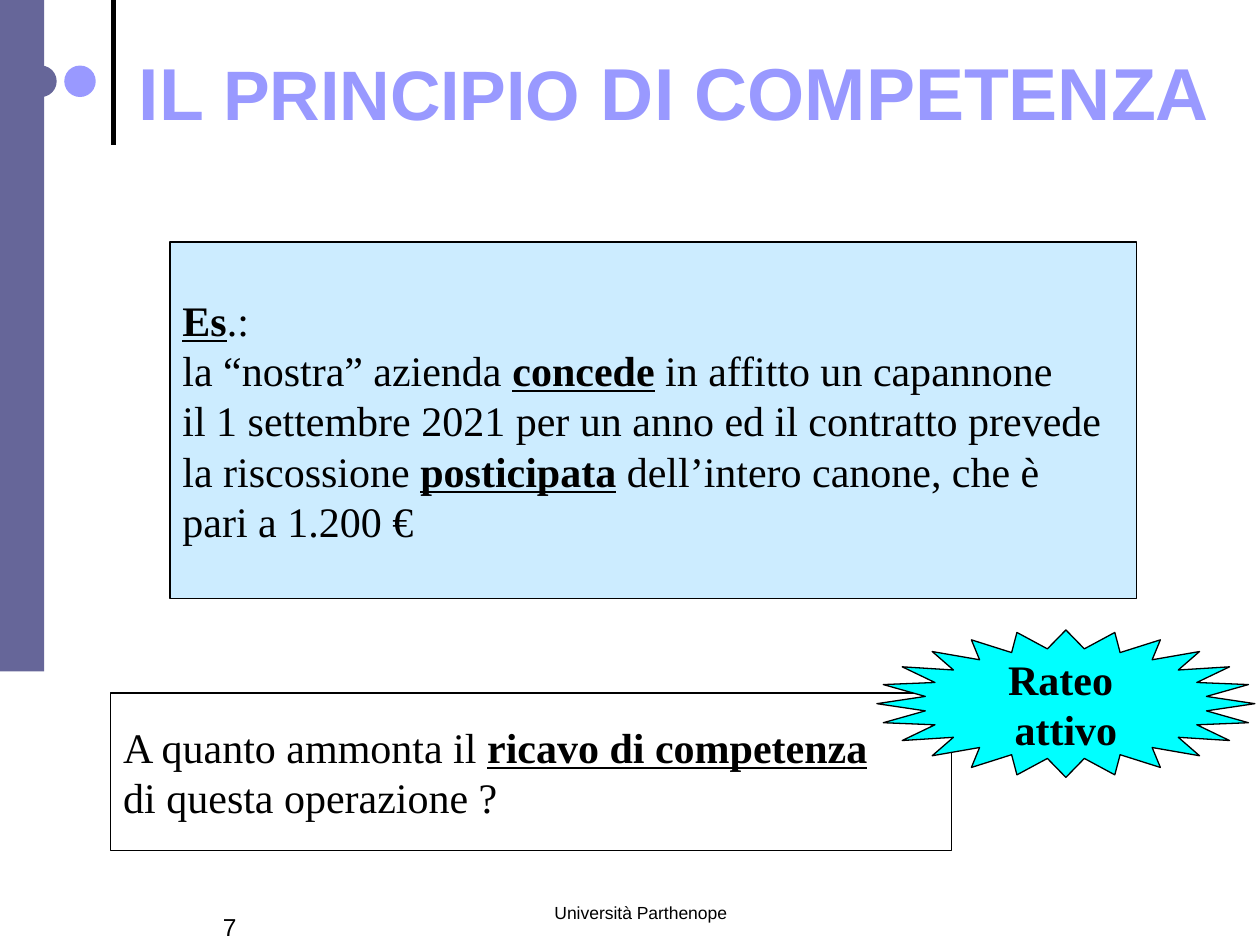
"""Build the slide on the accrual principle with a worked rental example."""
from dataclasses import dataclass
from typing import NamedTuple, Optional

from lxml.etree import SubElement
from pptx import Presentation
from pptx.dml.color import RGBColor
from pptx.enum.shapes import MSO_CONNECTOR, MSO_SHAPE
from pptx.enum.text import MSO_ANCHOR, PP_ALIGN
from pptx.oxml.ns import qn
from pptx.util import Inches, Pt


@dataclass(frozen=True)
class Theme:
    black: RGBColor = RGBColor(0x00, 0x00, 0x00)
    white: RGBColor = RGBColor(0xFF, 0xFF, 0xFF)
    slate: RGBColor = RGBColor(0x66, 0x66, 0x99)
    lilac: RGBColor = RGBColor(0x99, 0x99, 0xFF)
    sky: RGBColor = RGBColor(0xCC, 0xEC, 0xFF)
    cyan: RGBColor = RGBColor(0x00, 0xFF, 0xFF)
    sans: str = "Arial"
    serif: str = "Times New Roman"
    title_size: float = 42
    title_small_size: float = 40
    body_size: float = 24
    number_size: float = 14
    footer_size: float = 10
    outline: float = 0.75
    rule: float = 3


THEME = Theme()


class Box(NamedTuple):
    left: float
    top: float
    width: float
    height: float


class Span(NamedTuple):
    text: str
    size: float = THEME.body_size
    bold: bool = False
    underline: bool = False
    font: str = THEME.serif
    color: RGBColor = THEME.black


class Panel(NamedTuple):
    kind: MSO_SHAPE
    box: Box
    fill: RGBColor
    outlined: bool = False
    lines: tuple = ()
    alignment: PP_ALIGN = PP_ALIGN.LEFT
    adjustment: Optional[float] = None


class Label(NamedTuple):
    box: Box
    text: str
    size: float
    alignment: PP_ALIGN


def key(text: str) -> Span:
    """Return an emphasised body span."""
    return Span(text, bold=True, underline=True)


def title_span(text: str, size: float = THEME.title_size) -> Span:
    """Return a span in the title style."""
    return Span(text, size, bold=True, font=THEME.sans, color=THEME.lilac)


TITLE = (
    title_span("IL "),
    title_span("PRINCIPIO", THEME.title_small_size),
    title_span(" DI COMPETENZA"),
)
EXAMPLE = (
    (key("Es"), Span(".:")),
    (Span("la “nostra” azienda "), key("concede"), Span(" in affitto un capannone")),
    (Span("il 1 settembre 2021 per un anno ed il contratto prevede"),),
    (Span("la riscossione "), key("posticipata"), Span(" dell’intero canone, che è")),
    (Span("pari a 1.200 €"),),
)
QUESTION = (
    (Span("A quanto ammonta il "), key("ricavo di competenza")),
    (Span("di questa operazione ?"),),
)
ANSWER = ((Span("Rateo ", bold=True),), (Span("attivo", bold=True),))

PANELS = (
    Panel(MSO_SHAPE.OVAL, Box(0.2, 0.52, 0.25, 0.25), THEME.slate),
    Panel(MSO_SHAPE.OVAL, Box(0.51, 0.52, 0.25, 0.25), THEME.lilac),
    Panel(MSO_SHAPE.RECTANGLE, Box(0, 0, 0.35, 5.33), THEME.slate),
    Panel(MSO_SHAPE.RECTANGLE, Box(1.35, 1.92, 7.67, 2.83), THEME.sky, True, EXAMPLE),
    Panel(MSO_SHAPE.RECTANGLE, Box(0.88, 5.5, 6.67, 1.25), THEME.white, True, QUESTION),
    Panel(MSO_SHAPE.STAR_24_POINT, Box(6.96, 5, 3, 1.17), THEME.cyan, True, ANSWER,
          PP_ALIGN.CENTER, 0.375),
)
LABELS = (
    Label(Box(3.5, 7.11, 3.17, 0.5), "Università Parthenope", THEME.footer_size, PP_ALIGN.CENTER),
    Label(Box(1.67, 7.19, 1.42, 0.5), "7", THEME.number_size, PP_ALIGN.LEFT),
)


def write_lines(text_frame, lines: tuple, alignment: PP_ALIGN) -> None:
    """Fill a text frame with one paragraph per line of spans."""
    text_frame.word_wrap = True
    for index, spans in enumerate(lines):
        paragraph = text_frame.add_paragraph() if index else text_frame.paragraphs[0]
        paragraph.alignment = alignment
        for span in spans:
            run = paragraph.add_run()
            run.text = span.text
            run.font.size = Pt(span.size)
            run.font.name = span.font
            run.font.bold = span.bold
            run.font.underline = span.underline
            run.font.color.rgb = span.color


def add_panel(slide, panel: Panel) -> None:
    """Draw a filled shape with its optional outline and text."""
    shape = slide.shapes.add_shape(panel.kind, *map(Inches, panel.box))
    shape.shadow.inherit = False
    shape.fill.solid()
    shape.fill.fore_color.rgb = panel.fill
    if panel.outlined:
        shape.line.color.rgb = THEME.black
        shape.line.width = Pt(THEME.outline)
    else:
        shape.line.fill.background()
    if panel.adjustment is not None:
        shape.adjustments[0] = panel.adjustment
    shape.text_frame.vertical_anchor = MSO_ANCHOR.MIDDLE
    write_lines(shape.text_frame, panel.lines, panel.alignment)


def add_label(slide, label: Label) -> None:
    """Place a small line of footer text."""
    text_box = slide.shapes.add_textbox(*map(Inches, label.box))
    span = Span(label.text, label.size, font=THEME.sans)
    write_lines(text_box.text_frame, ((span,),), label.alignment)


def add_rule(slide) -> None:
    """Draw the vertical rule beside the title."""
    rule = slide.shapes.add_connector(
        MSO_CONNECTOR.STRAIGHT, Inches(0.9), Inches(0), Inches(0.9), Inches(1.15))
    rule.line.color.rgb = THEME.black
    rule.line.width = Pt(THEME.rule)
    SubElement(rule.element.spPr, qn("a:effectLst"))


def set_title(slide) -> None:
    """Move and fill the title placeholder."""
    title = slide.shapes.title
    title.left, title.top, title.width, title.height = map(Inches, Box(0.9, 0.21, 8.9, 1.67))
    title.text_frame.vertical_anchor = MSO_ANCHOR.TOP
    title.text_frame.margin_top = Inches(0.16)
    write_lines(title.text_frame, (TITLE,), PP_ALIGN.CENTER)


def main() -> None:
    """Assemble and save the presentation."""
    presentation = Presentation()
    presentation.slide_width, presentation.slide_height = Inches(10), Inches(7.5)
    slide = presentation.slides.add_slide(presentation.slide_layouts[5])
    add_rule(slide)
    for panel in PANELS:
        add_panel(slide, panel)
    for label in LABELS:
        add_label(slide, label)
    set_title(slide)
    presentation.save("out.pptx")


if __name__ == "__main__":
    main()
